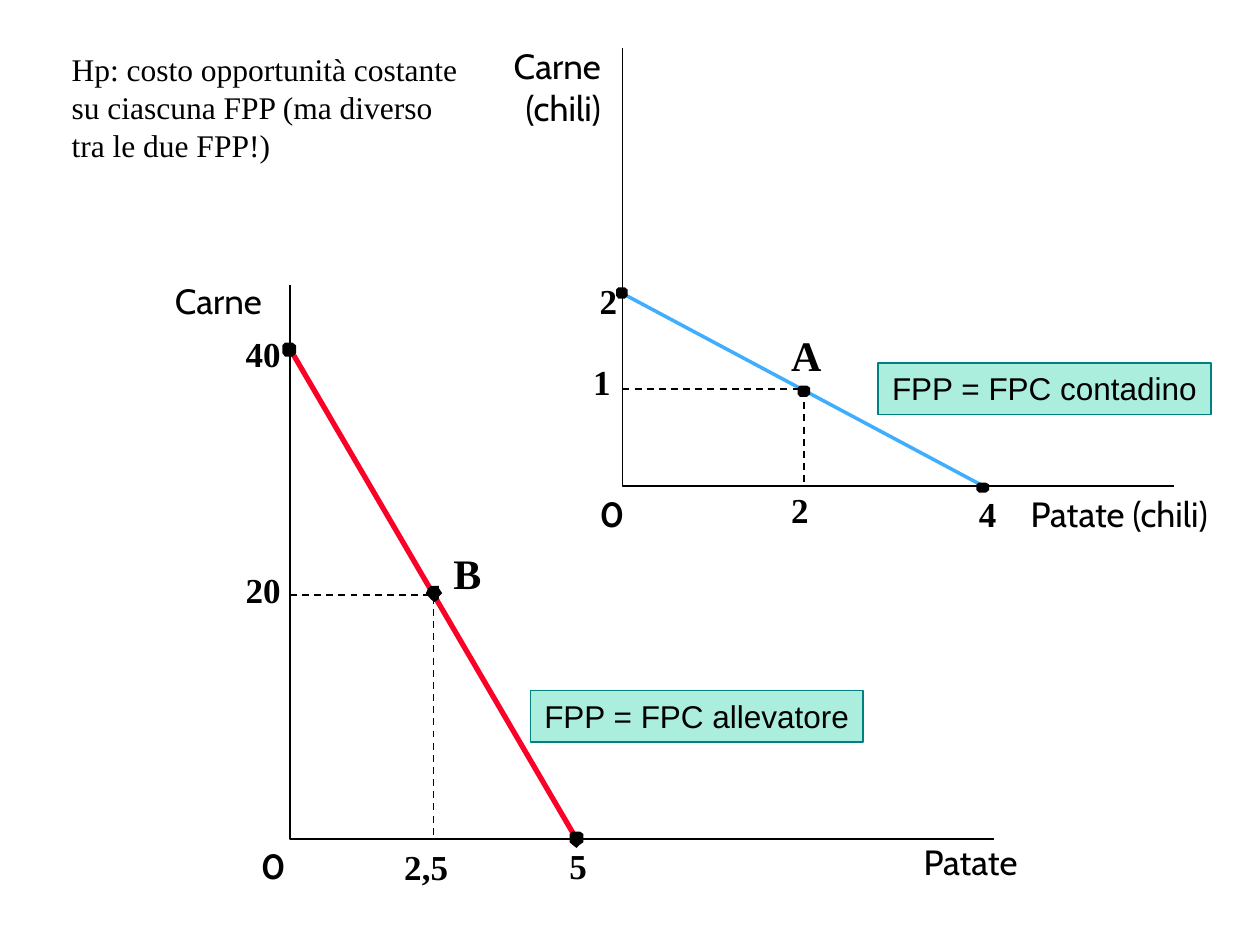
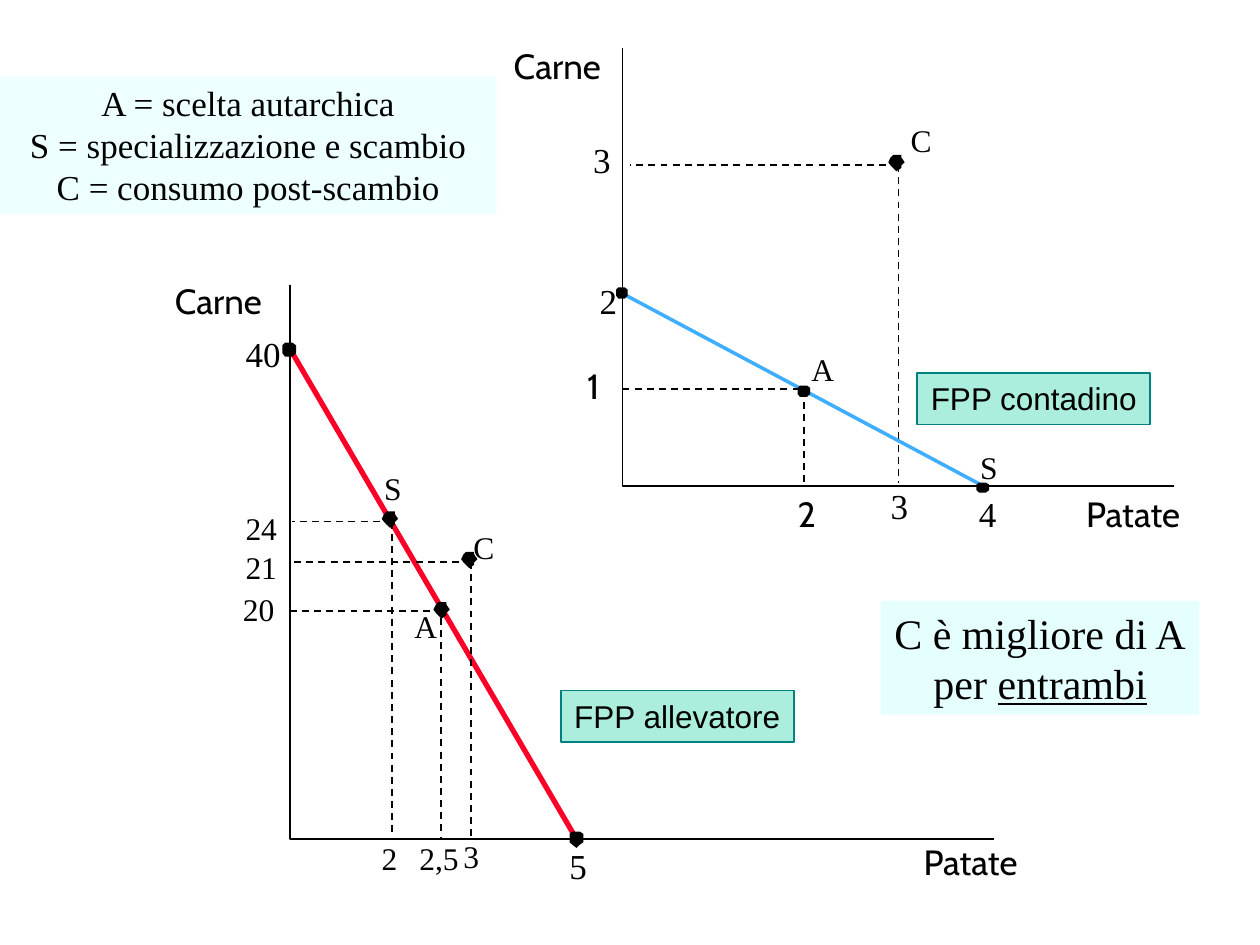
"""Builds two slides that compare the production frontiers of a farmer and a rancher."""
import dataclasses

import lxml.etree
import pptx
import pptx.dml.color
import pptx.enum.dml
import pptx.enum.shapes
import pptx.enum.text
import pptx.oxml.ns
import pptx.util

Inches = pptx.util.Inches
qn = pptx.oxml.ns.qn
PARAGRAPH = pptx.enum.text.PP_ALIGN


@dataclasses.dataclass(frozen=True)
class Theme:
    ink: str = "000000"
    rancher: str = "FC0128"
    farmer: str = "40AEFF"
    tag: str = "00CC99"
    tag_edge: str = "008080"
    note: str = "CCFFFF"
    axis_font: str = "Cabin"
    value_font: str = "Times New Roman"
    tag_font: str = "Arial"
    small: int = 18
    medium: int = 20
    large: int = 24
    thin: int = 1
    farmer_width: int = 2
    rancher_width: int = 3


THEME = Theme()
RANCHER_ORIGIN = (2.3, 6.66)
FARMER_ORIGIN = (4.94, 3.86)
GEM = [(0.5, 1), (0.8, 0.8), (0.8, 0.65), (1, 0.45), (0.8, 0.15), (0.8, 0),
       (0.5, 0), (0.3, 0), (0.15, 0.15), (0, 0.45), (0.15, 0.65), (0.3, 0.8)]
PEG = [(0.5, 1), (0.75, 0.8), (1, 0.65), (1, 0.15), (0.75, 0),
       (0.2, 0), (0, 0.15), (0, 0.65), (0.2, 0.8)]
KNOB = [(0.2, 1), (0.75, 1), (1, 0.75), (1, 0.2), (0.75, 0),
        (0.2, 0), (0, 0.2), (0, 0.75)]


def rgb(value):
    return pptx.dml.color.RGBColor.from_string(value)


def write_text(frame, text, font=THEME.value_font, size=THEME.medium, bold=False,
               align=PARAGRAPH.LEFT, underline=None, inset=True, wrap=False):
    frame.word_wrap = wrap
    frame.auto_size = pptx.enum.text.MSO_AUTO_SIZE.SHAPE_TO_FIT_TEXT
    frame.vertical_anchor = pptx.enum.text.MSO_ANCHOR.TOP
    if not inset:
        frame.margin_left = frame.margin_right = frame.margin_top = frame.margin_bottom = 0
    for index, line in enumerate(text.split("\n")):
        para = frame.paragraphs[0] if index == 0 else frame.add_paragraph()
        para.alignment = align
        pieces = line.partition(underline) if underline else (line,)
        for piece in filter(None, pieces):
            span = para.add_run()
            span.text = piece
            span.font.name = font
            span.font.size = pptx.util.Pt(size)
            span.font.bold = bold
            span.font.underline = piece == underline
            span.font.color.rgb = rgb(THEME.ink)


class Sketch:
    """Holds the theme and the current page, and draws each kind of element."""

    def __init__(self, deck, theme):
        self.deck = deck
        self.theme = theme
        self.page = None

    def new_page(self):
        self.page = self.deck.slides.add_slide(self.deck.slide_layouts[6])

    def label(self, text, left, top, width, height, **style):
        box = self.page.shapes.add_textbox(*map(Inches, (left, top, width, height)))
        write_text(box.text_frame, text, **style)

    def axis_label(self, text, left, top, width, height=0.33, **style):
        style = {"font": self.theme.axis_font, "inset": False} | style
        self.label(text, left, top, width, height, **style)

    def value_label(self, text, left, top, width, bold):
        self.axis_label(text, left, top, width, font=self.theme.value_font, bold=bold)

    def panel(self, text, left, top, width, height, color, opacity, edge=None, **style):
        box = self.page.shapes.add_shape(
            pptx.enum.shapes.MSO_SHAPE.RECTANGLE, *map(Inches, (left, top, width, height)))
        box.shadow.inherit = False
        box.fill.solid()
        box.fill.fore_color.rgb = rgb(color)
        tint = box.element.spPr.find(qn("a:solidFill"))[0]
        lxml.etree.SubElement(tint, qn("a:alpha")).set("val", str(opacity * 1000))
        if edge:
            self.stroke(box.line, edge, self.theme.thin)
        else:
            box.line.fill.background()
        write_text(box.text_frame, text, align=PARAGRAPH.CENTER, **style)

    def tag(self, text, left, top, width):
        self.panel(text, left, top, width, 0.41, self.theme.tag, 33, self.theme.tag_edge,
                   font=self.theme.tag_font, size=self.theme.small)

    def stroke(self, line, color, width, dashed=False):
        line.color.rgb = rgb(color)
        line.width = pptx.util.Pt(width)
        if dashed:
            line.dash_style = pptx.enum.dml.MSO_LINE.DASH

    def outline(self, points, close):
        corners = [tuple(map(Inches, point)) for point in points]
        builder = self.page.shapes.build_freeform(*corners[0])
        builder.add_line_segments(corners[1:], close=close)
        shape = builder.convert_to_shape()
        shape.shadow.inherit = False
        return shape

    def bend(self, points, dashed=False):
        shape = self.outline(points, close=False)
        shape.fill.background()
        self.stroke(shape.line, self.theme.ink, self.theme.thin, dashed)

    def guide(self, origin, corner):
        self.bend([(origin[0], corner[1]), corner, (corner[0], origin[1])], dashed=True)

    def dot(self, left, top, width=0.13, height=0.13, form=GEM):
        shape = self.outline([(left + x * width, top + y * height) for x, y in form], close=True)
        shape.fill.solid()
        shape.fill.fore_color.rgb = rgb(self.theme.ink)
        shape.line.fill.background()

    def line(self, start, end, color, width, dashed=False):
        connector = self.page.shapes.add_connector(
            pptx.enum.shapes.MSO_CONNECTOR.STRAIGHT, *map(Inches, start + end))
        lxml.etree.SubElement(connector.element.spPr, qn("a:effectLst"))
        self.stroke(connector.line, color, width, dashed)

    def dashes(self, corner, left, bottom):
        for end in ((left, corner[1]), (corner[0], bottom)):
            self.line(corner, end, self.theme.ink, self.theme.thin, dashed=True)

    def rancher_chart(self, choice, bold):
        x, y = RANCHER_ORIGIN
        self.axis_label("Patate", 7.33, 6.67, 0.79)
        self.axis_label("Carne", 1.38, 2.22, 0.7, align=PARAGRAPH.RIGHT)
        self.bend([(x, 2.26), (x, y), (7.89, y)])
        self.guide(RANCHER_ORIGIN, choice)
        self.value_label("5", 4.52, 6.7, 0.14, bold)
        self.line((2.32, 2.8), (4.57, 6.65), self.theme.rancher, self.theme.rancher_width)
        self.dot(choice[0] - 0.06, choice[1] - 0.07)
        self.value_label("40", 1.95, 2.64, 0.28, bold)
        self.dot(4.52, 6.6, 0.11, 0.13, PEG)
        self.dot(2.24, 2.72, 0.11, 0.11, KNOB)

    def farmer_chart(self, meat, bold):
        x, y = FARMER_ORIGIN
        self.value_label("2", 4.76, 2.22, 0.14, bold)
        self.value_label("4", 7.77, 3.91, 0.14, bold)
        self.axis_label(meat, 4.06, 0.35, 0.71, 0.33 * len(meat.split("\n")),
                        align=PARAGRAPH.RIGHT)
        self.bend([(x, 0.38), (x, y), (9.32, y)])
        self.line((4.96, 2.34), (7.79, 3.85), self.theme.farmer, self.theme.farmer_width)
        self.dot(7.75, 3.83, 0.1, 0.08, KNOB)
        self.guide(FARMER_ORIGIN, (6.38, 3.09))
        self.dot(6.33, 3.06, 0.1, 0.09, KNOB)
        self.dot(4.89, 2.28, 0.09, 0.09, KNOB)


def autarky_page(sketch):
    theme = sketch.theme
    sketch.new_page()
    sketch.rancher_chart((3.44, 4.72), bold=True)
    sketch.farmer_chart("Carne\n(chili)", bold=True)
    sketch.axis_label("Patate (chili)", 8.18, 3.91, 1.51)
    sketch.axis_label("0", 2.07, 6.7, 0.14, bold=True)
    sketch.axis_label("0", 4.76, 3.91, 0.16, bold=True)
    sketch.tag("FPP = FPC contadino", 6.97, 2.88, 2.64)
    sketch.tag("FPP = FPC allevatore", 4.21, 5.48, 2.64)
    for text, left, top, width in (("A", 6.18, 2.57, 0.44), ("B", 3.5, 4.3, 0.42)):
        sketch.label(text, left, top, width, 0.5, size=theme.large, bold=True)
    for text, left, top, width in (("2", 6.18, 3.83, 0.34), ("1", 4.61, 2.81, 0.34),
                                   ("2,5", 3.11, 6.66, 0.55), ("20", 1.85, 4.46, 0.48)):
        sketch.label(text, left, top, width, 0.43, bold=True)
    sketch.label("Hp: costo opportunità costante\nsu ciascuna FPP (ma diverso\n"
                 "tra le due FPP!)", 0.47, 0.35, 3.68, 1.01, size=theme.small, wrap=True)


def trade_page(sketch):
    theme = sketch.theme
    sketch.new_page()
    sketch.rancher_chart((3.5, 4.85), bold=False)
    sketch.farmer_chart("Carne", bold=False)
    sketch.axis_label("Patate", 8.62, 3.91, 0.79)
    sketch.axis_label("1", 4.66, 2.89, 0.29, wrap=True)
    sketch.axis_label("2", 6.33, 3.91, 0.16)
    sketch.tag("FPP contadino", 7.28, 2.96, 1.85)
    sketch.tag("FPP allevatore", 4.45, 5.48, 1.85)
    for corner, left, bottom in (((7.13, 1.31), 5, 3.83), ((3.74, 4.46), 2.32, 6.66),
                                 ((3.11, 4.14), 2.32, 6.66)):
        sketch.dashes(corner, left, bottom)
        sketch.dot(corner[0] - 0.08, corner[1] - 0.08)
    sketch.panel("A = scelta autarchica\nS = specializzazione e scambio\n"
                 "C = consumo post-scambio", 0, 0.6, 3.94, 1.1, theme.note, 34, wrap=True)
    sketch.panel("C è migliore di A\nper entrambi", 6.99, 4.77, 2.53, 0.9, theme.note, 50,
                 size=theme.large, underline="entrambi")
    for text, left, top, width in (
            ("A", 6.34, 2.73, 0.38), ("S", 7.68, 3.51, 0.34), ("C", 7.13, 0.91, 0.37),
            ("S", 2.95, 3.67, 0.34), ("A", 3.19, 4.77, 0.38), ("C", 3.66, 4.14, 0.37),
            ("24", 1.85, 3.99, 0.45), ("21", 1.85, 4.3, 0.45), ("20", 1.83, 4.63, 0.45),
            ("2", 2.93, 6.61, 0.33), ("2,5", 3.23, 6.61, 0.52), ("3", 3.58, 6.59, 0.33)):
        sketch.label(text, left, top, width, 0.4, size=theme.small)
    for left, top in ((4.61, 1.05), (6.97, 3.8)):
        sketch.label("3", left, top, 0.34, 0.43)


def main():
    deck = pptx.Presentation()
    deck.slide_width, deck.slide_height = Inches(10), Inches(7.5)
    sketch = Sketch(deck, THEME)
    autarky_page(sketch)
    trade_page(sketch)
    deck.save("out.pptx")


if __name__ == "__main__":
    main()
